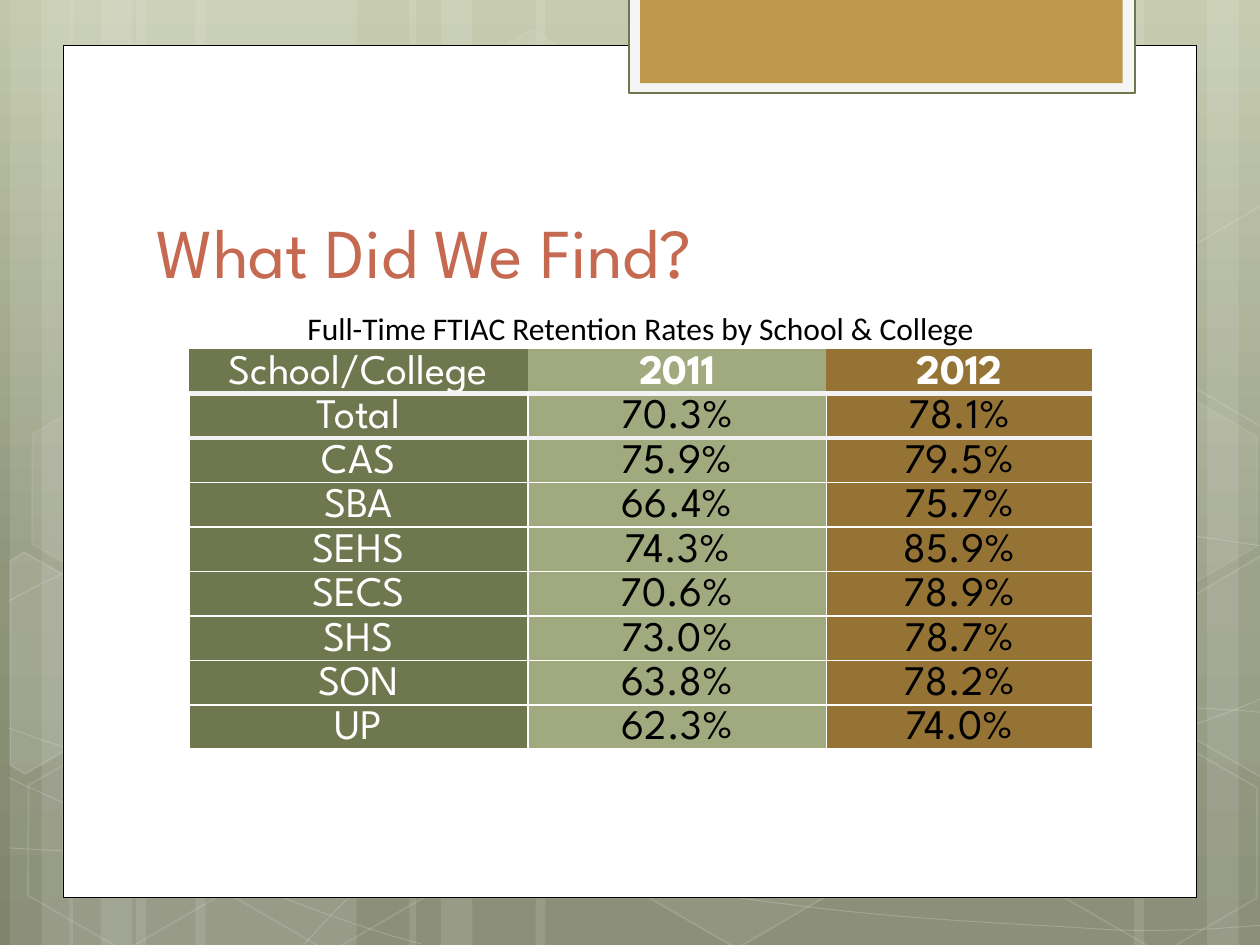
"""Build the retention rates slide: a framed panel on a hexagon backdrop with a table."""
from copy import deepcopy
from dataclasses import dataclass
from math import cos, radians, sin
from typing import Any, Optional

from lxml.etree import SubElement
from pptx import Presentation
from pptx.dml.color import RGBColor
from pptx.enum.shapes import MSO_SHAPE
from pptx.enum.text import MSO_ANCHOR, MSO_AUTO_SIZE, PP_ALIGN
from pptx.oxml.ns import qn
from pptx.util import Inches, Pt


@dataclass(frozen=True)
class Theme:
    white: str = "FFFFFF"
    black: str = "000000"
    rule: str = "F2F2F2"
    mat: str = "F5F5F5"
    olive: str = "6E774E"
    sage: str = "A1AA7E"
    brown: str = "947335"
    gold: str = "BF974D"
    title: str = "C66951"
    backdrop: tuple = ((0, "C1C7A9"), (0.62, "8F957A"), (1, "7F846B"))
    heading_font: str = "League Spartan"
    caption_font: str = "Calibri"
    title_size: int = 40
    table_size: int = 24
    caption_size: int = 18


@dataclass(frozen=True)
class Look:
    fill: Optional[str] = None
    line: Optional[str] = None
    width: float = 1
    fill_opacity: int = 100
    line_opacity: int = 100


@dataclass(frozen=True)
class Hexagon:
    left: float
    top: float
    fill_opacity: int
    line_opacity: int


@dataclass(frozen=True)
class CutHexagon:
    center: tuple
    points: tuple
    fill_opacity: int = 0


THEME = Theme()
TILT = 30
STRIPES = (
    (1.08, 1.75, 0), (0.08, 0.5, 0), (0.33, 0.83, 0), (1.55, 1.75, 0), (0.55, 0.5, 0), (0.8, 0.83, 0),
    (7.33, 1.75, 180), (9.58, 0.5, 180), (9, 0.83, 180), (4.25, 3.08, 0), (3.25, 0.5, 0), (3.5, 0.83, 0),
)
CURVES = (
    ((0.07, 6.73), (0.61, 6.76), (1.15, 6.79), (1.9, 6.78), (2.65, 6.77), (3.58, 6.75),
     (4.58, 6.65), (5.58, 6.55), (7, 6.36), (7.92, 6.17), (8.83, 5.98), (9.77, 5.68),
     (10.07, 5.51)),
    ((0.07, 4.77), (0.36, 4.61), (0.65, 4.46), (1.21, 4.31), (1.78, 4.16), (2.59, 3.94),
     (3.47, 3.87), (4.36, 3.8), (5.44, 3.79), (6.54, 3.87), (7.64, 3.95), (9.47, 4.26),
     (10.07, 4.34)),
    ((0.06, 6.17), (1.27, 6.72), (2.47, 7.27), (3.34, 7.49)),
    ((0.07, 5.78), (0.38, 5.89), (0.7, 6), (1.28, 6.16), (1.86, 6.31), (2.73, 6.56),
     (3.57, 6.73), (4.4, 6.9), (5.45, 7.08), (6.28, 7.18), (7.11, 7.29), (8, 7.33),
     (8.53, 7.36), (9.05, 7.4), (9.19, 7.38), (9.45, 7.38), (9.71, 7.37), (9.89, 7.35),
     (10.07, 7.34)),
    ((2.42, 7.49), (2.6, 7.29), (2.78, 7.09), (3.02, 6.91), (3.26, 6.73), (3.6, 6.53),
     (3.88, 6.39), (4.16, 6.25), (4.33, 6.19), (4.7, 6.09), (5.06, 5.99), (5.73, 5.85),
     (6.08, 5.78), (6.44, 5.71), (6.49, 5.71), (6.8, 5.69), (7.11, 5.66), (7.6, 5.63),
     (7.94, 5.62), (8.29, 5.61), (8.86, 5.62), (8.86, 5.62), (8.86, 5.62), (9.53, 5.62),
     (9.53, 5.62), (9.71, 5.63), (9.88, 5.64), (9.97, 5.65), (10.06, 5.66), (10.03, 5.65),
     (10.06, 5.66)),
)
HEXAGONS = (
    Hexagon(3.34, 0.36, 4, 8), Hexagon(4.97, 5.89, 6, 12), Hexagon(0.11, 5.91, 0, 12),
    Hexagon(0.14, 3.12, 7, 8), Hexagon(1.74, 5.92, 0, 12), Hexagon(7.53, 4.53, 10, 12),
    Hexagon(8.34, 5.93, 0, 12), Hexagon(8.34, 3.14, 7, 8),
)
CUT_HEXAGONS = (
    CutHexagon((0.36, 5.35), ((0.08, 4.45), (0.19, 4.38), (0.96, 4.82), (0.95, 5.7), (0.2, 6.14), (0.08, 6.07)), 10),
    CutHexagon((9.85, 5.2), ((9.26, 4.85), (10.01, 4.41), (10.09, 4.46), (10.09, 6.13), (10.02, 6.17), (9.26, 5.73)), 4),
    CutHexagon((9.85, 2.41), ((9.26, 2.07), (10.01, 1.63), (10.1, 1.68), (10.09, 3.35), (10.02, 3.39), (9.26, 2.95))),
)
CAPTION = "Full-Time FTIAC Retention Rates by School & College"
RATES = (
    ("School/College", "2011", "2012"),
    ("Total", "70.3%", "78.1%"),
    ("CAS", "75.9%", "79.5%"),
    ("SBA", "66.4%", "75.7%"),
    ("SEHS", "74.3%", "85.9%"),
    ("SECS", "70.6%", "78.9%"),
    ("SHS", "73.0%", "78.7%"),
    ("SON", "63.8%", "78.2%"),
    ("UP", "62.3%", "74.0%"),
)


def set_values(target: Any, values: dict) -> None:
    for name, value in values.items():
        setattr(target, name, value)


def write(frame: Any, text: str, font: str, size: int, color: str, bold: bool, align: Any) -> Any:
    para = frame.paragraphs[0]
    para.alignment = align
    span = para.add_run()
    span.text = text
    set_values(span.font, {"name": font, "size": Pt(size), "bold": bold})
    span.font.color.rgb = RGBColor.from_string(color)
    return para


def paint(shape: Any, look: Look) -> None:
    shape.shadow.inherit = False
    for part, color in ((shape.fill, look.fill), (shape.line.fill, look.line)):
        if color:
            part.solid()
            part.fore_color.rgb = RGBColor.from_string(color)
        else:
            part.background()
    if look.line:
        shape.line.width = Pt(look.width)
    for query, opacity in (("p:spPr/a:solidFill", look.fill_opacity), ("p:spPr/a:ln/a:solidFill", look.line_opacity)):
        for tint in shape.element.xpath(f"{query}/a:srgbClr"):
            if opacity < 100:
                SubElement(tint, qn("a:alpha"), val=str(opacity * 1000))


def add_box(page: Any, kind: Any, place: tuple, look: Look, rotation: int = 0) -> Any:
    box = page.shapes.add_shape(kind, *map(Inches, place))
    box.rotation = rotation
    paint(box, look)
    return box


def add_outline(page: Any, points: Any, closed: bool, look: Look) -> Any:
    start, *others = [(Inches(x), Inches(y)) for x, y in points]
    builder = page.shapes.build_freeform(*start)
    builder.add_line_segments(others, close=closed)
    outline = builder.convert_to_shape()
    paint(outline, look)
    return outline


def bend(outline: Any) -> None:
    trace = outline.element.xpath(".//a:path")[0]
    segments = trace.findall(qn("a:lnTo"))
    for first in range(0, len(segments), 3):
        curve = SubElement(trace, qn("a:cubicBezTo"))
        for segment in segments[first:first + 3]:
            curve.append(segment[0])
            trace.remove(segment)


def upright(item: CutHexagon) -> list:
    middle_x, middle_y = item.center
    c, s = cos(radians(TILT)), sin(radians(TILT))
    offsets = [(x - middle_x, y - middle_y) for x, y in item.points]
    return [(middle_x + x * c + y * s, middle_y - x * s + y * c) for x, y in offsets]


def glass(fill_opacity: int, line_opacity: int) -> Look:
    return Look(THEME.white if fill_opacity else None, THEME.white, 1, fill_opacity, line_opacity)


def add_backdrop(page: Any) -> None:
    fill = page.background.fill
    fill.gradient()
    fill.gradient_angle = 270
    stops = page.element.xpath(".//a:gsLst")[0]
    stops.append(deepcopy(stops[0]))
    for stop, (position, color) in zip(fill.gradient_stops, THEME.backdrop):
        stop.position = position
        stop.color.rgb = RGBColor.from_string(color)
    for left, width, rotation in STRIPES:
        add_box(page, MSO_SHAPE.RECTANGLE, (left, 0, width, 7.5), Look(THEME.white, fill_opacity=10), rotation)
    for curve in CURVES:
        bend(add_outline(page, curve, False, Look(line=THEME.white, width=0.5, line_opacity=20)))
    for item in HEXAGONS:
        look = glass(item.fill_opacity, item.line_opacity)
        box = add_box(page, MSO_SHAPE.HEXAGON, (item.left, item.top, 1.75, 1.52), look, TILT)
        box.adjustments[0] = 0.285
    for item in CUT_HEXAGONS:
        add_outline(page, upright(item), True, glass(item.fill_opacity, 12)).rotation = TILT


def add_panel(page: Any) -> None:
    for place, look in (
        ((0.5, 0.36, 9, 6.76), Look(THEME.white, THEME.black, 0.5)),
        ((4.99, -0.02, 4.02, 0.76), Look(THEME.mat, THEME.olive, 1.25)),
        ((5.08, -0.02, 3.83, 0.68), Look(THEME.gold)),
    ):
        add_box(page, MSO_SHAPE.RECTANGLE, place, look)


def add_title(page: Any) -> None:
    title = page.shapes.title
    set_values(title, {"left": Inches(1.14), "top": Inches(1.12), "width": Inches(7.68), "height": Inches(1.25)})
    frame = title.text_frame
    set_values(frame, {"vertical_anchor": MSO_ANCHOR.BOTTOM, "word_wrap": True, "auto_size": MSO_AUTO_SIZE.NONE})
    write(frame, "What Did We Find?", THEME.heading_font, THEME.title_size, THEME.title, False, PP_ALIGN.LEFT)
    page.shapes.element.append(title.element)


def format_cell(cell: Any, fill: str, thick: str, bare: str) -> None:
    properties = cell._tc.get_or_add_tcPr()
    for side in "LRTB":
        color, width = (THEME.rule, 3) if side in thick else (THEME.white, 1)
        edge = SubElement(properties, qn(f"a:ln{side}"), w=str(Pt(width)))
        if side in bare:
            SubElement(edge, qn("a:noFill"))
        else:
            SubElement(SubElement(edge, qn("a:solidFill")), qn("a:srgbClr"), val=color)
    cell.fill.solid()
    cell.fill.fore_color.rgb = RGBColor.from_string(fill)
    set_values(cell, {
        "vertical_anchor": MSO_ANCHOR.MIDDLE, "margin_left": Inches(0.07), "margin_right": Inches(0.07),
        "margin_top": 0, "margin_bottom": 0,
    })


def add_rates(page: Any) -> None:
    holder = page.shapes.add_table(len(RATES) + 1, 3, *map(Inches, (1.5, 2.42, 7.17, 3.4)))
    table = holder.table
    set_values(table, {"first_row": False, "horz_banding": False})
    for column, width in zip(table.columns, (2.69, 2.37, 2.11)):
        column.width = Inches(width)
    holder.height = Inches(4.49)
    for column in range(3):
        format_cell(table.cell(0, column), THEME.white, "", "B")
    caption = table.cell(0, 0)
    caption.merge(table.cell(0, 2))
    write(caption.text_frame, CAPTION, THEME.caption_font, THEME.caption_size, THEME.black, False,
          PP_ALIGN.CENTER).line_spacing = 1.15
    thick = {1: "B", 2: "TB", 3: "T"}
    for row, values in enumerate(RATES, 1):
        for column, (value, fill) in enumerate(zip(values, (THEME.olive, THEME.sage, THEME.brown))):
            cell = table.cell(row, column)
            format_cell(cell, fill, thick.get(row, ""), "LRT" if row == 1 else "")
            color = THEME.white if row == 1 or column == 0 else THEME.black
            write(cell.text_frame, value, THEME.heading_font, THEME.table_size, color,
                  row == 1 and column > 0, PP_ALIGN.CENTER).line_spacing = 1.15


def main() -> None:
    deck = Presentation()
    set_values(deck, {"slide_width": Inches(10), "slide_height": Inches(7.5)})
    page = deck.slides.add_slide(deck.slide_layouts[5])
    for build in (add_backdrop, add_panel, add_title, add_rates):
        build(page)
    deck.save("out.pptx")


if __name__ == "__main__":
    main()
